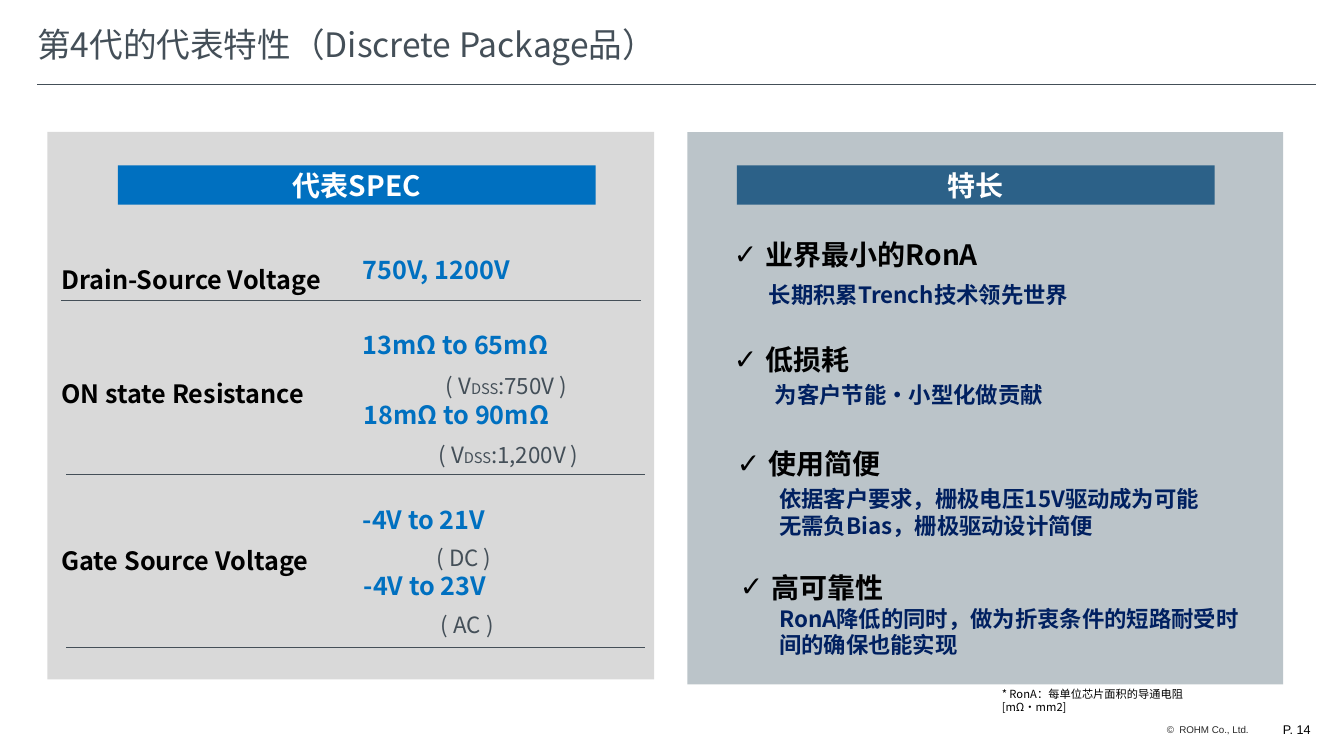
"""Build the slide on the main characteristics of the fourth generation."""
from typing import NamedTuple

from lxml.etree import SubElement
from pptx import Presentation
from pptx.dml.color import RGBColor
from pptx.enum.shapes import MSO_CONNECTOR, MSO_SHAPE
from pptx.enum.text import MSO_ANCHOR, MSO_AUTO_SIZE, PP_ALIGN
from pptx.oxml.ns import qn
from pptx.util import Pt

COLORS = {
    "slate": "444F58", "black": "000000", "white": "FFFFFF", "credit": "272727",
    "spec_panel": "D9D9D9", "feature_panel": "BBC4C9",
    "spec": "0070C0", "feature": "2C6188", "detail": "002060",
}
FONT = "Noto Sans CJK SC"


class Box(NamedTuple):
    left: float
    top: float
    width: float
    height: float


class Panel(NamedTuple):
    box: Box
    color: str
    heading: str
    heading_left: float
    heading_color: str


class Caption(NamedTuple):
    box: Box
    parts: tuple[str, ...]


class Rule(NamedTuple):
    left: float
    right: float
    y: float
    weight: float


class Feature(NamedTuple):
    heading: str
    heading_box: Box
    detail: str
    detail_box: Box


PANELS = [
    Panel(Box(33.8, 94.3, 433.4, 391), "spec_panel", "代表SPEC", 84.2, "spec"),
    Panel(Box(491, 94.3, 425.5, 394.6), "feature_panel", "特长", 526.3, "feature"),
]
PARAMETERS = [
    Caption(Box(36.7, 185, 209.5, 28.8), ("Drain-Source Voltage",)),
    Caption(Box(36.7, 266.4, 196.6, 28.8), ("ON state Resistance",)),
    Caption(Box(36.7, 385.9, 200.2, 28.8), ("Gate Source Voltage",)),
]
VALUES = [
    Caption(Box(252, 177.8, 164.9, 36), ("750V, 1200V",)),
    Caption(Box(252, 231.8, 155.5, 28.8), ("13mΩ to 65mΩ",)),
    Caption(Box(252.7, 281.5, 155.5, 28.8), ("18mΩ to 90mΩ",)),
    Caption(Box(252, 356.4, 144.7, 36), ("-4V to 21V",)),
    Caption(Box(252.7, 403.9, 144.7, 36), ("-4V to 23V",)),
]
CONDITIONS = [
    Caption(Box(289.4, 262.1, 144.7, 26.6), ("( V", "DSS", ":750V )")),
    Caption(Box(290.9, 311.8, 144.7, 26.6), ("( V", "DSS", ":1,200V )")),
    Caption(Box(259.2, 385.2, 144.7, 26.6), ("( DC )",)),
    Caption(Box(261.4, 432.7, 144.7, 26.6), ("( AC )",)),
]
RULES = [
    Rule(26.6, 940.3, 60.5, 1),
    Rule(43.9, 457.9, 214.6, 0.75),
    Rule(47.5, 460.8, 339.1, 0.75),
    Rule(47.5, 460.8, 462.2, 0.75),
]
FEATURES = [
    Feature("业界最小的RonA", Box(517, 166.3, 195.1, 31.7),
            "长期积累Trench技术领先世界", Box(542.2, 197.3, 341.3, 26.6)),
    Feature("低损耗", Box(517, 241.2, 97.9, 31.7),
            "为客户节能・小型化做贡献", Box(546.5, 268.6, 329, 26.6)),
    Feature("使用简便", Box(519.1, 315.4, 118.1, 31.7),
            "依据客户要求，栅极电压15V驱动成为可能\n无需负Bias，栅极驱动设计简便",
            Box(549.4, 342.7, 344.2, 46)),
    Feature("高可靠性", Box(521.3, 403.9, 118.1, 31.7),
            "RonA降低的同时，做为折衷条件的短路耐受时间的确保也能实现",
            Box(549.4, 428.4, 344.2, 46)),
]


def points(box: Box) -> list[Pt]:
    """Convert the four measures of a box to lengths."""
    return [Pt(measure) for measure in box]


def place(holder, box: Box) -> None:
    """Move a placeholder into a box."""
    holder.left, holder.top, holder.width, holder.height = points(box)


def write(shape, *parts: str, size: float, color: str, bold: bool = False,
          font: str = FONT, align=PP_ALIGN.LEFT, anchor=MSO_ANCHOR.TOP,
          wrap: bool = True, grow: bool = True, bullet: str = "",
          subscript_size: float = 10.5) -> None:
    """Write one paragraph; every second part takes the subscript size."""
    frame = shape.text_frame
    frame.word_wrap = wrap
    frame.auto_size = MSO_AUTO_SIZE.SHAPE_TO_FIT_TEXT if grow else MSO_AUTO_SIZE.NONE
    frame.vertical_anchor = anchor
    paragraph = frame.paragraphs[0]
    paragraph.alignment = align
    paragraph.space_before = Pt(0)
    if bullet:
        properties = paragraph._p.get_or_add_pPr()
        properties.set("marL", str(Pt(22.5)))
        properties.set("indent", str(Pt(-22.5)))
        SubElement(properties, qn("a:buChar")).set("char", bullet)
    for index, part in enumerate(parts):
        for line_index, line in enumerate(part.split("\n")):
            if line_index:
                paragraph.add_line_break()
            run = paragraph.add_run()
            run.text = line
            run.font.size = Pt(subscript_size if index % 2 else size)
            run.font.bold = bold
            run.font.color.rgb = RGBColor.from_string(COLORS[color])
            run.font.name = font
            SubElement(run.font._element, qn("a:ea")).set("typeface", font)


def add_text(slide, box: Box, *parts: str, **text_format) -> None:
    """Add a text box and write into it."""
    write(slide.shapes.add_textbox(*points(box)), *parts, **text_format)


def add_bar(slide, box: Box, color: str):
    """Add a plain filled rectangle."""
    bar = slide.shapes.add_shape(MSO_SHAPE.RECTANGLE, *points(box))
    bar.shadow.inherit = False
    bar.fill.solid()
    bar.fill.fore_color.rgb = RGBColor.from_string(COLORS[color])
    bar.line.fill.background()
    return bar


def add_panel(slide, panel: Panel) -> None:
    """Add a panel with its heading bar."""
    add_bar(slide, panel.box, panel.color)
    heading = add_bar(slide, Box(panel.heading_left, 118.1, 341.3, 28.1),
                      panel.heading_color)
    write(heading, panel.heading, size=20, color="white", bold=True, grow=False,
          align=PP_ALIGN.CENTER, anchor=MSO_ANCHOR.MIDDLE)


def add_rule(slide, rule: Rule) -> None:
    """Add a horizontal dividing line."""
    divider = slide.shapes.add_connector(
        MSO_CONNECTOR.STRAIGHT, Pt(rule.left), Pt(rule.y), Pt(rule.right), Pt(rule.y))
    divider.line.width = Pt(rule.weight)
    divider.line.color.rgb = RGBColor.from_string(COLORS["slate"])
    SubElement(divider._element.spPr, qn("a:effectLst"))


def main() -> None:
    """Build the slide and save it."""
    deck = Presentation()
    deck.slide_width, deck.slide_height = Pt(960), Pt(540)
    slide = deck.slides.add_slide(deck.slide_layouts.get_by_name("Comparison"))
    title, *feature_headings = slide.placeholders
    place(title, Box(26.6, 7.9, 850.3, 46.8))
    title.text_frame.margin_left = Pt(0)
    write(title, "第4代的代表特性（Discrete Package品）", size=24, color="slate",
          anchor=MSO_ANCHOR.MIDDLE, grow=False)

    for panel in PANELS:
        add_panel(slide, panel)
    for rule in RULES:
        add_rule(slide, rule)
    for box, parts in PARAMETERS:
        add_text(slide, box, *parts, size=18, color="black", bold=True, wrap=False)
    for box, parts in VALUES:
        add_text(slide, box, *parts, size=18, color="spec", bold=True, wrap=False)
    for box, parts in CONDITIONS:
        add_text(slide, box, *parts, size=16, color="slate", align=PP_ALIGN.CENTER)
    for heading, feature in zip(feature_headings, FEATURES):
        slide.shapes._spTree.append(heading._element)
        place(heading, feature.heading_box)
        write(heading, feature.heading, size=20, color="black", bold=True,
              wrap=False, bullet="✓")
        add_text(slide, feature.detail_box, feature.detail, size=16,
                 color="detail", bold=True)

    add_text(slide, Box(708.5, 487.4, 190.1, 17.3),
             "* RonA：每单位芯片面积的导通电阻[mΩ·mm2]", size=8, color="black")
    add_text(slide, Box(576.7, 513.4, 322.3, 15.8), "©  ROHM Co., Ltd.", size=7,
             color="credit", font="Arial", align=PP_ALIGN.RIGHT)
    add_text(slide, Box(837.4, 511.9, 105.8, 30.2), "P. 14", size=9,
             color="black", font="Arial", align=PP_ALIGN.RIGHT)
    deck.save("out.pptx")


if __name__ == "__main__":
    main()
